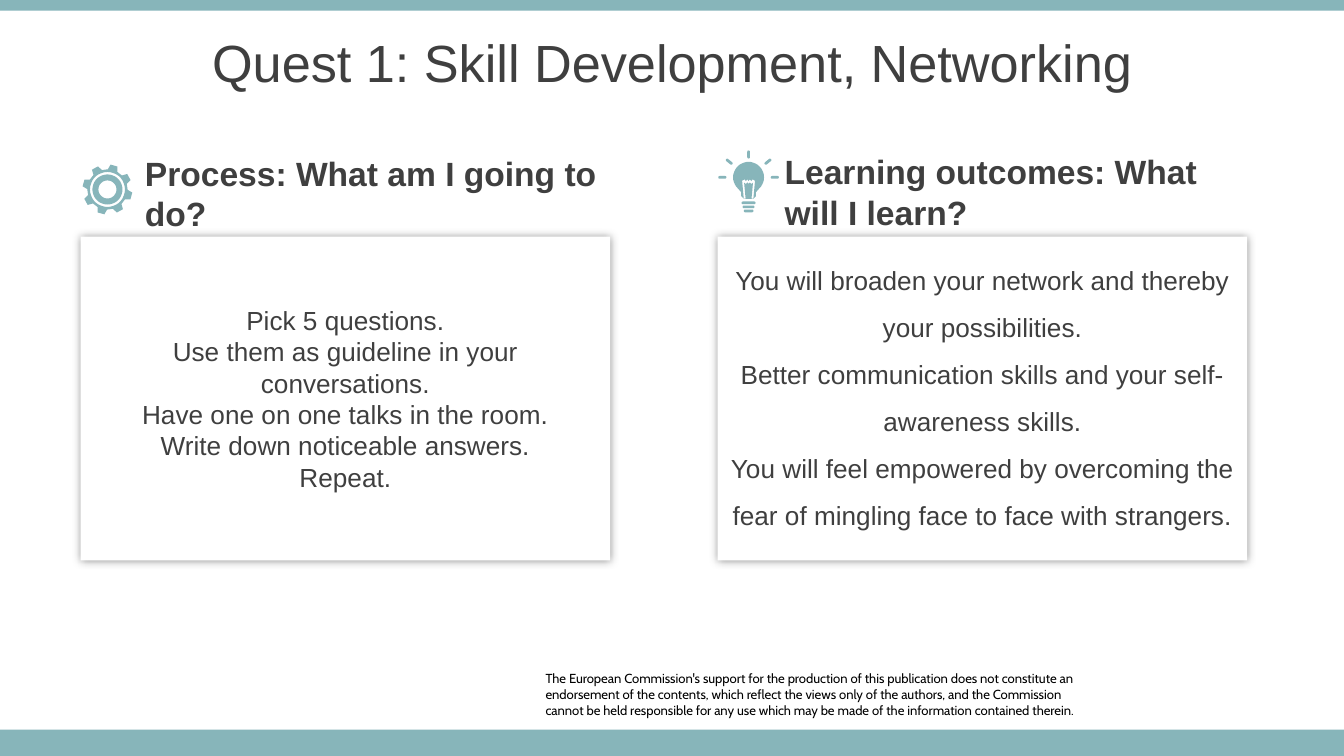
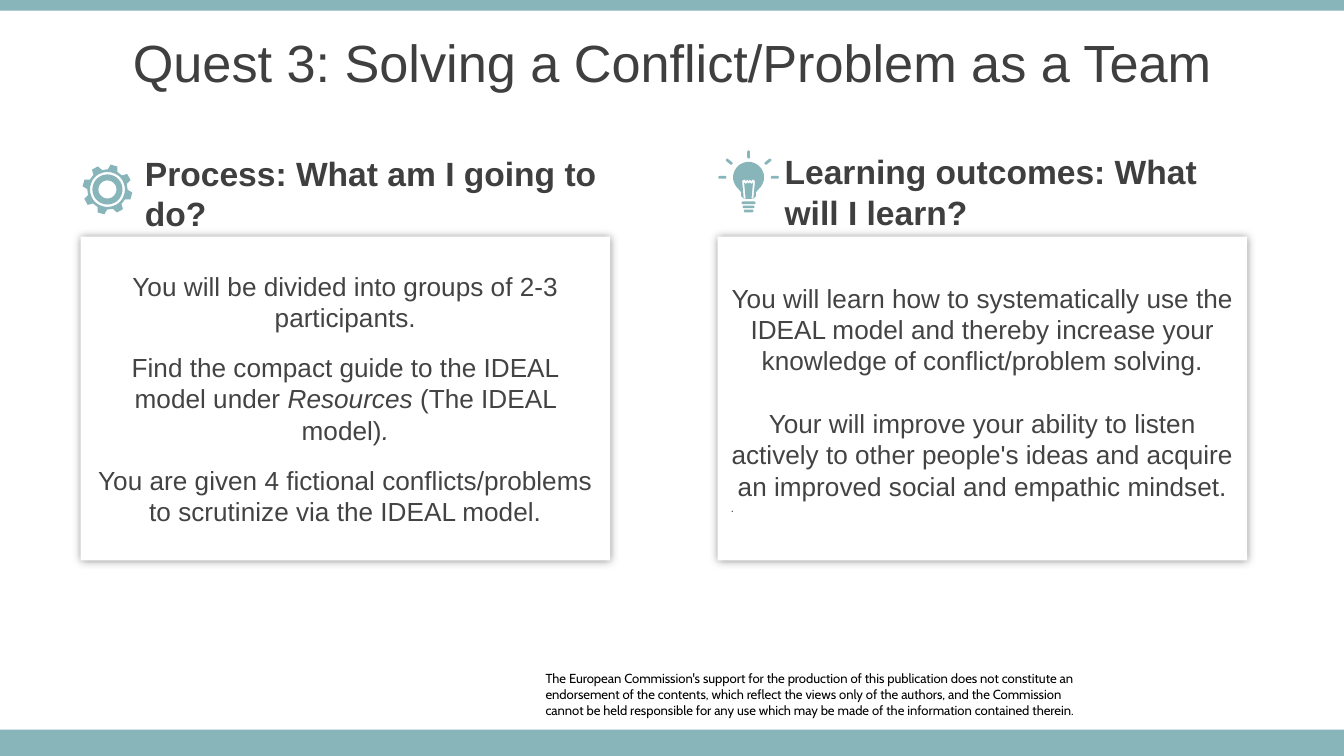
import math

import lxml.etree
import pptx
import pptx.dml.color
import pptx.enum.shapes
import pptx.enum.text
import pptx.oxml.ns
import pptx.util

Inches = pptx.util.Inches
Pt = pptx.util.Pt
ALIGN = pptx.enum.text.PP_ALIGN
ANCHOR = pptx.enum.text.MSO_ANCHOR

TEAL, DARK, GREY, BLACK, WHITE = "87B5BA", "3F3F3F", "434343", "000000", "FFFFFF"
LEFT_CARD, RIGHT_CARD = 0.6, 5.34
DISCLAIMER = [
    "The European Commission's support for the production of this publication does not "
    "constitute an endorsement of the contents, which reflect the views only of the "
    "authors, and the Commission",
    "cannot be held responsible for any use which may be made of the information "
    "contained therein.",
]


def color(hex_text):
    return pptx.dml.color.RGBColor.from_string(hex_text)


def polar(radius, degrees, center=(0, 0)):
    angle = math.radians(degrees)
    return center[0] + radius * math.cos(angle), center[1] + radius * math.sin(angle)


def circle(radius):
    return [polar(radius, degrees) for degrees in range(0, 360, 10)]


def capsule(start, end, radius=10):
    """Outline of a bar with round ends."""
    heading = math.degrees(math.atan2(end[1] - start[1], end[0] - start[0]))
    turns = range(-90, 91, 30)
    return ([polar(radius, heading + turn, end) for turn in turns]
            + [polar(radius, heading + 180 + turn, start) for turn in turns])


def mirrored(half):
    """Close a left half outline with its reflection in the vertical axis."""
    return half + [(-x, y) for x, y in reversed(half)]


def gear_outlines():
    """Toothed rim, then rings, in thousandths of an inch around the centre."""
    rim = [polar(radius, -75 + 45 * tooth + turn)
           for tooth in range(8)
           for radius, turn in ((150, -14), (186, -8), (186, 8), (150, 14))]
    return [rim, circle(130), circle(112), circle(67)]


def bulb_outlines():
    """Glass, filament, base and rays, in thousandths of an inch around the centre."""
    glass = mirrored([polar(115, degrees) for degrees in range(-90, -226, -9)]
                     + [(-55, 110), (-55, 140), (-35, 160)])
    filament = mirrored([(0, 28), (-10, 15), (-20, 28), (-30, 15), (-48, 25),
                         (-36, 158), (-22, 158), (-33, 40), (-20, 50), (-10, 38), (0, 48)])
    base = [capsule((-half, y), (half, y)) for half, y in ((42, 190), (34, 220), (26, 250))]
    rays = [capsule(polar(inner + 10, degrees), polar(inner + 50, degrees))
            for degrees, inner in ((180, 165), (219, 155), (270, 140), (321, 155), (0, 165))]
    return [glass, filament] + base + rays


class Deck:
    """Holds the shared style and the slide being built."""

    def __init__(self):
        self.show = pptx.Presentation()
        self.show.slide_width = Inches(10)
        self.show.slide_height = Inches(10) * 9 // 16
        self.slide = None

    def new_slide(self, title):
        self.slide = self.show.slides.add_slide(self.show.slide_layouts[6])
        self.text(4.06, 4.99, 4.17, 0.35, DISCLAIMER, 7, BLACK, font="Cabin",
                  anchor=ANCHOR.TOP, insets=(0, 0))
        self.rect(0, 5.43, 10, 0.2, TEAL)
        self.rect(0, 0, 10, 0.08, TEAL)
        self.text(0, 0.14, 10, 0.63, [title], 28, align=ALIGN.CENTER)

    def rect(self, left, top, width, height, fill):
        shape = self.slide.shapes.add_shape(
            pptx.enum.shapes.MSO_SHAPE.RECTANGLE,
            Inches(left), Inches(top), Inches(width), Inches(height))
        self.finish(shape, fill)
        return shape

    def finish(self, shape, fill):
        shape.shadow.inherit = False
        shape.fill.solid()
        shape.fill.fore_color.rgb = color(fill)
        shape.line.fill.background()

    def glow(self, shape):
        """Add a soft, centred shadow."""
        qn = pptx.oxml.ns.qn
        effects = shape._element.spPr.find(qn("a:effectLst"))
        shadow = lxml.etree.SubElement(effects, qn("a:outerShdw"), blurRad=str(Pt(5)),
                                       dist="0", dir="0", algn="ctr", rotWithShape="0")
        tint = lxml.etree.SubElement(shadow, qn("a:srgbClr"), val=BLACK)
        lxml.etree.SubElement(tint, qn("a:alpha"), val="40000")

    def icon(self, center_x, center_y, outlines):
        """Draw all outlines as one shape; inner ones become holes."""
        first, *others = outlines
        builder = self.slide.shapes.build_freeform(*first[0], scale=Inches(1) / 1000)
        builder.add_line_segments(first[1:])
        for outline in others:
            builder.move_to(*outline[0])
            builder.add_line_segments(outline[1:])
        self.finish(builder.convert_to_shape(Inches(center_x), Inches(center_y)), TEAL)

    def text(self, left, top, width, height, paragraphs, size, ink=DARK, **style):
        box = self.slide.shapes.add_textbox(
            Inches(left), Inches(top), Inches(width), Inches(height))
        self.fill_frame(box.text_frame, paragraphs, size, ink, **style)

    def fill_frame(self, frame, paragraphs, size, ink, font="Arial", bold=False,
                   align=ALIGN.LEFT, anchor=ANCHOR.MIDDLE, insets=(0.1, 0.05),
                   gap=0, line_spacing=None):
        """Fill a frame; a paragraph is a string or a list of (text, italic) runs."""
        frame.word_wrap = True
        frame.vertical_anchor = anchor
        frame.margin_left = frame.margin_right = Inches(insets[0])
        frame.margin_top = frame.margin_bottom = Inches(insets[1])
        for index, content in enumerate(paragraphs):
            paragraph = frame.add_paragraph() if index else frame.paragraphs[0]
            paragraph.alignment = align
            if index and gap:
                paragraph.space_before = Pt(gap)
            if line_spacing:
                paragraph.line_spacing = line_spacing
            paragraph.font.name = font
            paragraph.font.size = Pt(size)
            paragraph.font.bold = bold
            paragraph.font.color.rgb = color(ink)
            if isinstance(content, str):
                paragraph.add_run().text = content
            else:
                for words, italic in content:
                    run = paragraph.add_run()
                    run.text = words
                    run.font.italic = italic

    def card(self, left, paragraphs, ink=DARK, **style):
        shape = self.rect(left, 1.76, 3.94, 2.41, WHITE)
        self.glow(shape)
        self.fill_frame(shape.text_frame, paragraphs, 14, ink, align=ALIGN.CENTER, **style)
        return shape.text_frame

    def headings(self):
        self.icon(0.8, 1.41, gear_outlines())
        self.icon(5.57, 1.32, bulb_outlines())
        self.text(0.98, 1.28, 3.56, 0.31, ["Process: What am I going to do?"], 18, bold=True)
        self.text(5.74, 1.27, 3.56, 0.31, ["Learning outcomes: What will I learn?"], 18,
                  bold=True)


def networking_quest(deck):
    deck.new_slide("Quest 1: Skill Development, Networking")
    deck.card(LEFT_CARD, [
        "Pick 5 questions.",
        "Use them as guideline in your conversations.",
        "Have one on one talks in the room.",
        "Write down noticeable answers.",
        "Repeat.",
    ])
    outcomes = deck.card(RIGHT_CARD, [
        "You will broaden your network and thereby your possibilities.",
        "Better communication skills and your self-awareness skills.",
        "You will feel empowered by overcoming the fear of mingling face to face with "
        "strangers.",
    ], line_spacing=1.5)
    outcomes.margin_bottom = Inches(0.18)
    deck.headings()


def conflict_quest(deck):
    deck.new_slide("Quest 3: Solving a Conflict/Problem as a Team")
    deck.card(LEFT_CARD, [
        "You will be divided into groups of 2-3 participants.",
        [("Find the compact guide to the IDEAL model under ", False), ("Resources ", True),
         ("(The IDEAL model)", False), (".", True)],
        "You are given 4 fictional conflicts/problems to scrutinize via the IDEAL model.",
    ], GREY, gap=10)
    outcomes = deck.card(RIGHT_CARD, [
        "You will learn how to systematically use the IDEAL model and thereby increase "
        "your knowledge of conflict/problem solving.",
        "Your will improve your ability to listen actively to other people's ideas and "
        "acquire an improved social and empathic mindset.",
        ".",
    ], GREY, gap=16.8)
    closing_dot = outcomes.paragraphs[-1]
    closing_dot.alignment = ALIGN.LEFT
    closing_dot.space_before = Pt(0)
    closing_dot.font.size = Pt(6)
    closing_dot.font.color.rgb = color(DARK)
    deck.headings()


def main():
    deck = Deck()
    networking_quest(deck)
    conflict_quest(deck)
    deck.show.save("out.pptx")


if __name__ == "__main__":
    main()
